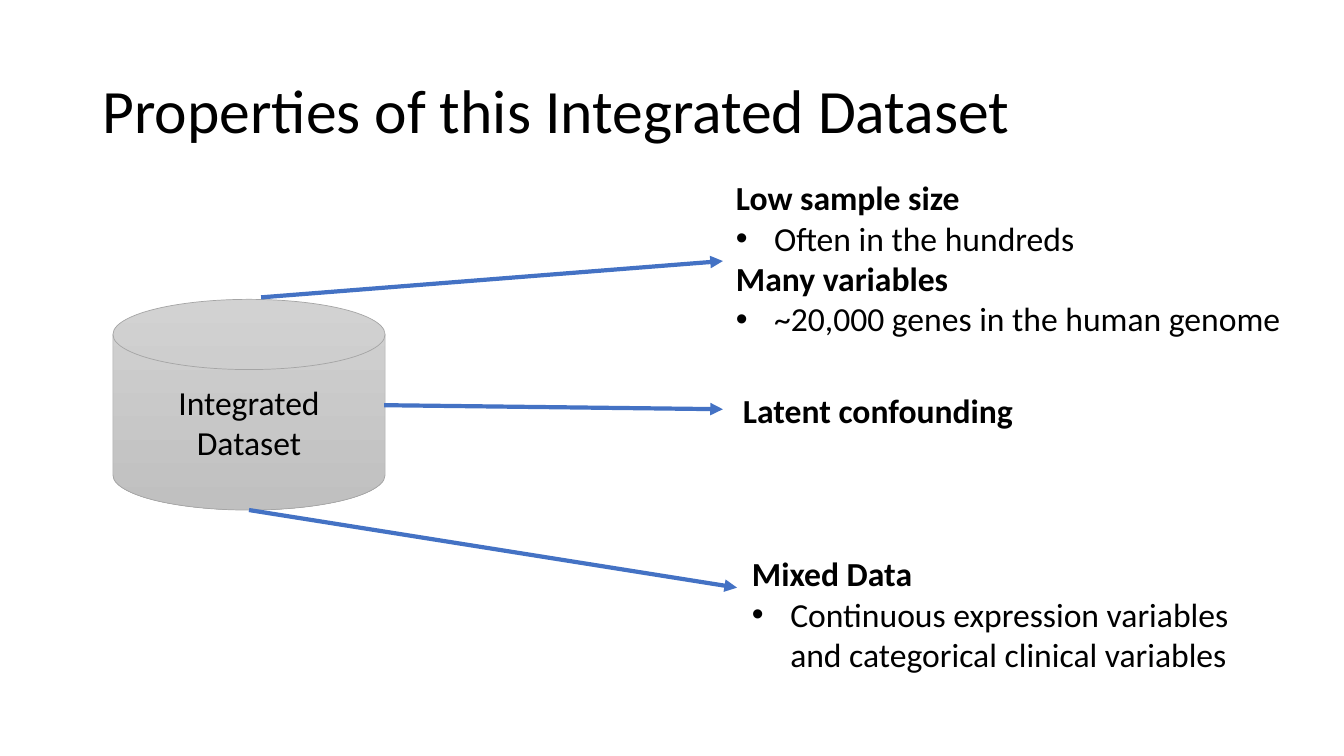
from lxml import etree
from pptx import Presentation, util as u
from pptx.dml.color import RGBColor
from pptx.enum import shapes, text
from pptx.oxml.ns import qn

# Content: boxes are left, top, width, height in inches
COLORS = {"text": "000000", "arrow": "4472C4", "edge": "A5A5A5",
          "disk_top": "D2D2D2", "disk_bottom": "C0C0C0"}
TITLE = ("Properties of this Integrated Dataset", (0.92, 0.4, 11.5, 1.45))
DATASET = ("Integrated Dataset", (1.12, 2.97, 2.7, 2.09))
# Each property: box, wrap, lines as (text, is heading), arrow start, arrow end
PROPERTIES = [
    ((7.2, 1.71, 5.69, 1.72), True,
     [("Low sample size", True), ("Often in the hundreds", False),
      ("Many variables", True), ("~20,000 genes in the human genome", False)],
     (2.59, 2.95), (7.17, 2.59)),
    ((7.27, 3.82, 2.91, 0.5), False, [("Latent confounding", True)],
     (3.81, 4.02), (7.17, 4.06)),
    ((7.36, 5.44, 5.06, 1.31), True,
     [("Mixed Data", True),
      ("Continuous expression variables and categorical clinical variables", False)],
     (2.47, 5.06), (7.31, 5.83)),
]
BULLET_INDENT = 0.38


def inches(values):
    return [u.Inches(value) for value in values]


def color(name):
    return RGBColor.from_string(COLORS[name])


def write(paragraph, content, size=24, bold=False, bullet=False,
          align=text.PP_ALIGN.LEFT, spacing=None):
    paragraph.alignment = align
    paragraph.line_spacing = spacing
    run = paragraph.add_run()
    run.text = content
    run.font.name = "Calibri"
    run.font.size = u.Pt(size)
    run.font.bold = bold
    run.font.color.rgb = color("text")
    if bullet:
        properties = paragraph._p.get_or_add_pPr()
        indent = u.Inches(BULLET_INDENT)
        properties.set("marL", str(indent))
        properties.set("indent", str(-indent))
        etree.SubElement(properties, qn("a:buFont")).set("typeface", "Arial")
        etree.SubElement(properties, qn("a:buChar")).set("char", "•")


def add_arrow(slide, start, end):
    arrow = slide.shapes.add_connector(
        shapes.MSO_CONNECTOR.STRAIGHT, *inches(start + end))
    arrow.line.color.rgb = color("arrow")
    arrow.line.width = u.Pt(3)
    etree.SubElement(arrow.line._get_or_add_ln(), qn("a:tailEnd")).set("type", "triangle")
    etree.SubElement(arrow._element.spPr, qn("a:effectLst"))


def add_text_box(slide, box, wrap=True, anchor=text.MSO_ANCHOR.TOP):
    frame = slide.shapes.add_textbox(*inches(box)).text_frame
    frame.word_wrap = wrap
    frame.vertical_anchor = anchor
    return frame


def main():
    presentation = Presentation()
    presentation.slide_width, presentation.slide_height = inches((13.33, 7.5))
    slide = presentation.slides.add_slide(presentation.slide_layouts[6])

    # Title
    title, box = TITLE
    frame = add_text_box(slide, box, anchor=text.MSO_ANCHOR.MIDDLE)
    write(frame.paragraphs[0], title, size=44, spacing=0.9)

    # Dataset cylinder
    label, box = DATASET
    disk = slide.shapes.add_shape(
        shapes.MSO_SHAPE.FLOWCHART_MAGNETIC_DISK, *inches(box))
    disk.shadow.inherit = False
    disk.fill.gradient()
    disk.fill.gradient_angle = 270
    for stop, name in zip(disk.fill.gradient_stops, ("disk_top", "disk_bottom")):
        stop.color.rgb = color(name)
    disk.line.color.rgb = color("edge")
    disk.line.width = u.Pt(0.5)
    disk.text_frame.word_wrap = True
    disk.text_frame.vertical_anchor = text.MSO_ANCHOR.MIDDLE
    write(disk.text_frame.paragraphs[0], label, align=text.PP_ALIGN.CENTER)

    # Properties, each with its arrow from the cylinder
    for box, wrap, lines, start, end in PROPERTIES:
        add_arrow(slide, start, end)
        frame = add_text_box(slide, box, wrap)
        frame.auto_size = text.MSO_AUTO_SIZE.SHAPE_TO_FIT_TEXT
        for index, (content, heading) in enumerate(lines):
            paragraph = frame.add_paragraph() if index else frame.paragraphs[0]
            write(paragraph, content, bold=heading, bullet=not heading)

    presentation.save("out.pptx")


if __name__ == "__main__":
    main()
